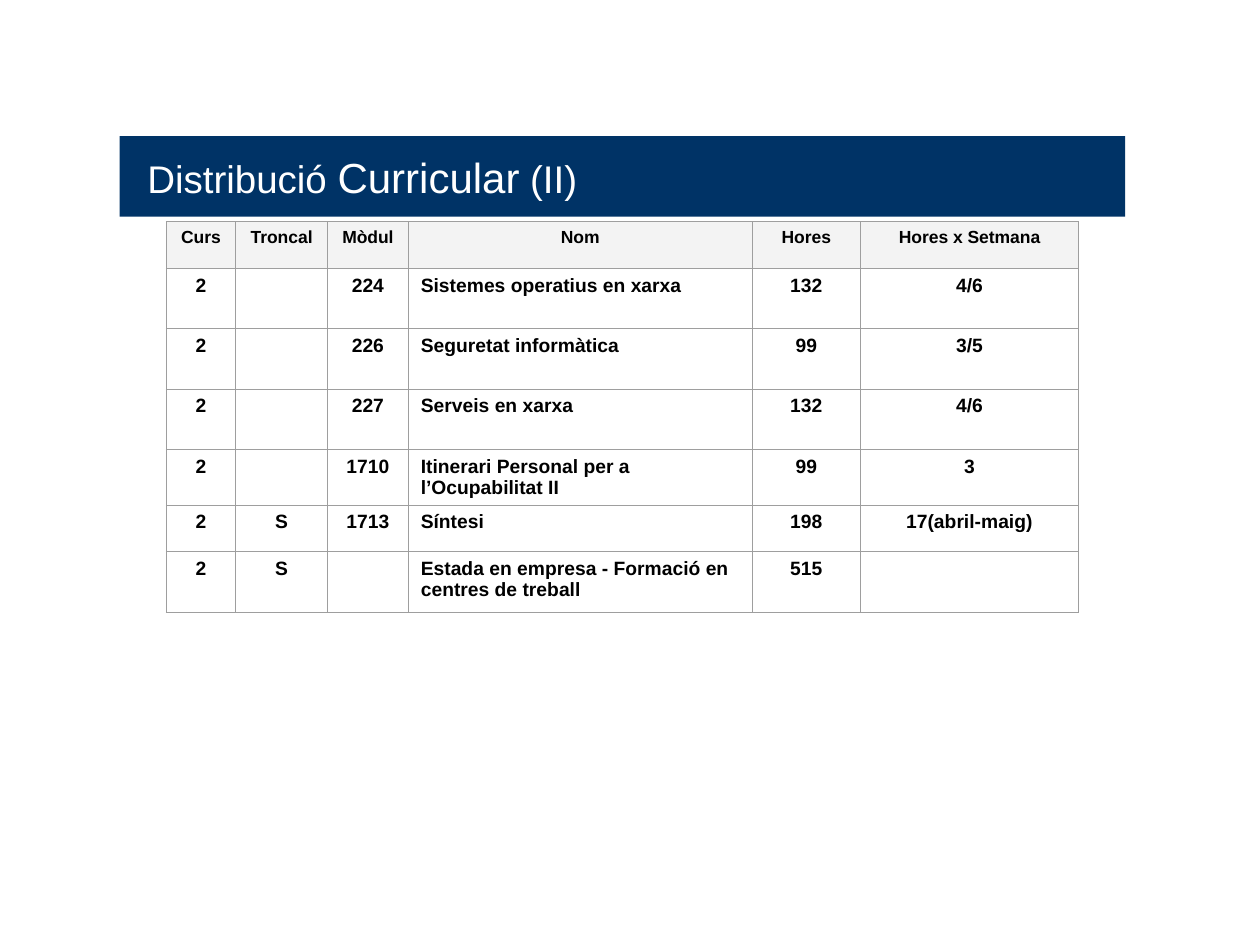
from dataclasses import astuple, dataclass

from lxml.etree import SubElement
from pptx import Presentation
from pptx.dml.color import RGBColor
from pptx.enum.shapes import MSO_SHAPE as Shape
from pptx.enum.text import MSO_ANCHOR as Anchor, PP_ALIGN as Align
from pptx.oxml.ns import qn
from pptx.util import Inches, Pt

COLORS = {
    "banner": "003366",
    "title": "FFFFFF",
    "header": "F3F3F3",
    "text": "000000",
    "border": "9E9E9E",
}
FONT = "Arial"
NAME_COLUMN = 3
COLUMN_WIDTHS = [0.55, 0.73, 0.64, 2.73, 0.86, 1.73]
TITLE_PARTS = [("Distribució ", 22), ("Curricular", 24), (" (II)", 22)]


@dataclass
class Course:
    year: str
    core: str
    code: str
    name: str
    hours: str
    weekly: str
    height: float


COURSES = [
    Course("Curs", "Troncal", "Mòdul", "Nom", "Hores", "Hores x Setmana", 0.37),
    Course("2", "", "224", "Sistemes operatius en xarxa", "132", "4/6", 0.48),
    Course("2", "", "226", "Seguretat informàtica", "99", "3/5", 0.48),
    Course("2", "", "227", "Serveis en xarxa", "132", "4/6", 0.48),
    Course("2", "", "1710", "Itinerari Personal per a l’Ocupabilitat II", "99", "3", 0.44),
    Course("2", "S", "1713", "Síntesi", "198", "17(abril-maig)", 0.37),
    Course("2", "S", "", "Estada en empresa - Formació en centres de treball", "515", "", 0.48),
]


def color(key: str) -> RGBColor:
    return RGBColor.from_string(COLORS[key])


def add_borders(cell) -> None:
    properties = cell._tc.get_or_add_tcPr()
    for side in ("a:lnL", "a:lnR", "a:lnT", "a:lnB"):
        line = SubElement(properties, qn(side), w=str(Pt(0.75)))
        SubElement(SubElement(line, qn("a:solidFill")), qn("a:srgbClr"), val=COLORS["border"])


def fill_cell(cell, text: str, is_header: bool, centered: bool) -> None:
    add_borders(cell)
    if is_header:
        cell.fill.solid()
        cell.fill.fore_color.rgb = color("header")
    else:
        cell.fill.background()
    cell.text = text
    paragraph = cell.text_frame.paragraphs[0]
    paragraph.alignment = Align.CENTER if centered else Align.LEFT
    font = paragraph.font
    font.name, font.bold = FONT, True
    font.size = Pt(10 if is_header else 11)
    font.color.rgb = color("text")


def add_banner(slide) -> None:
    banner = slide.shapes.add_shape(
        Shape.RECTANGLE, Inches(0.95), Inches(1.08), Inches(7.98), Inches(0.64)
    )
    banner.shadow.inherit = False
    banner.fill.solid()
    banner.fill.fore_color.rgb = color("banner")
    banner.line.fill.background()
    frame = banner.text_frame
    frame.margin_left = Inches(0.22)
    frame.vertical_anchor = Anchor.MIDDLE
    title = frame.paragraphs[0]
    title.alignment = Align.LEFT
    title.font.name = FONT
    title.font.color.rgb = color("title")
    for text, size in TITLE_PARTS:
        part = title.add_run()
        part.text = text
        part.font.size = Pt(size)


def add_curriculum(slide) -> None:
    curriculum = slide.shapes.add_table(
        len(COURSES), len(COLUMN_WIDTHS), Inches(1.32), Inches(1.76),
        Inches(sum(COLUMN_WIDTHS)), Inches(sum(course.height for course in COURSES)),
    ).table
    curriculum.first_row = curriculum.horz_banding = False
    for column, width in zip(curriculum.columns, COLUMN_WIDTHS):
        column.width = Inches(width)
    for index, (row, course) in enumerate(zip(curriculum.rows, COURSES)):
        row.height = Inches(course.height)
        is_header = index == 0
        for position, (cell, text) in enumerate(zip(row.cells, astuple(course))):
            fill_cell(cell, text, is_header, is_header or position != NAME_COLUMN)


def main() -> None:
    """Build the slide with the second-year curriculum."""
    presentation = Presentation()
    presentation.slide_width, presentation.slide_height = Inches(10), Inches(7.5)
    slide = presentation.slides.add_slide(presentation.slide_layouts[6])
    add_banner(slide)
    add_curriculum(slide)
    presentation.save("out.pptx")


if __name__ == "__main__":
    main()
